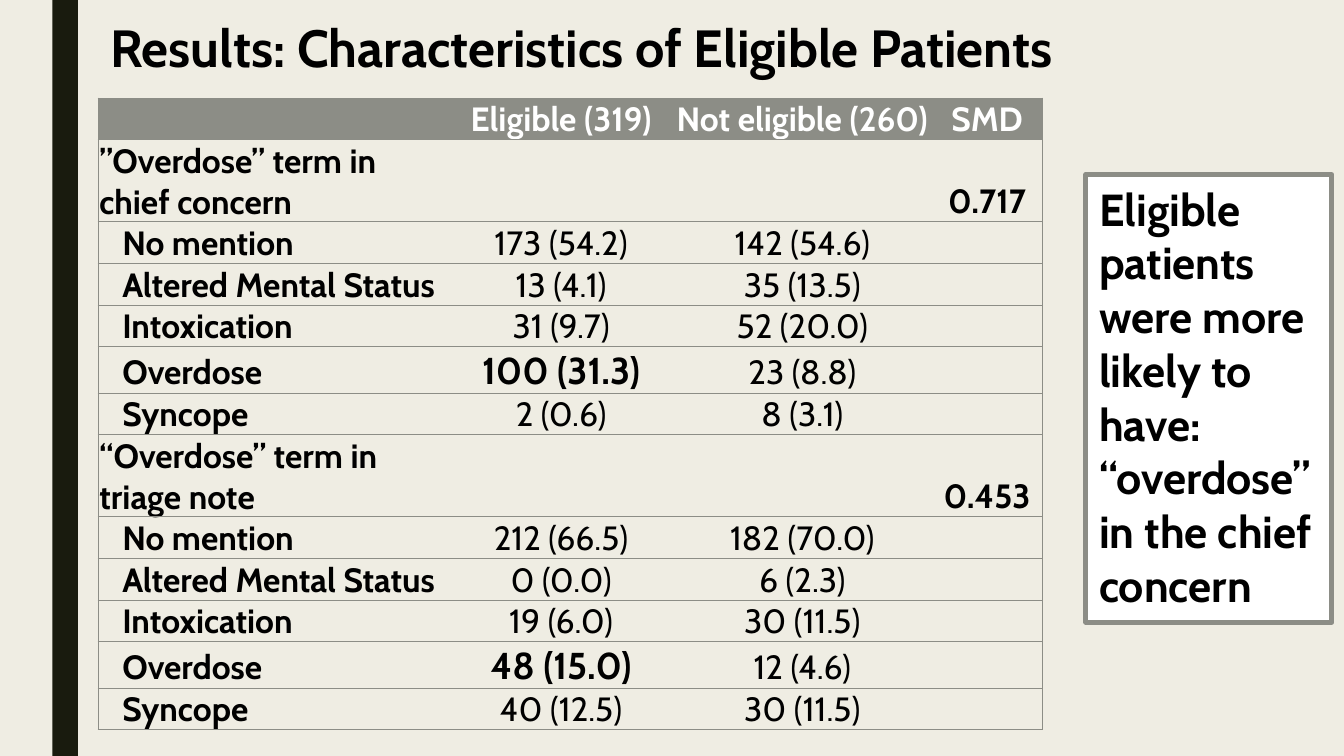
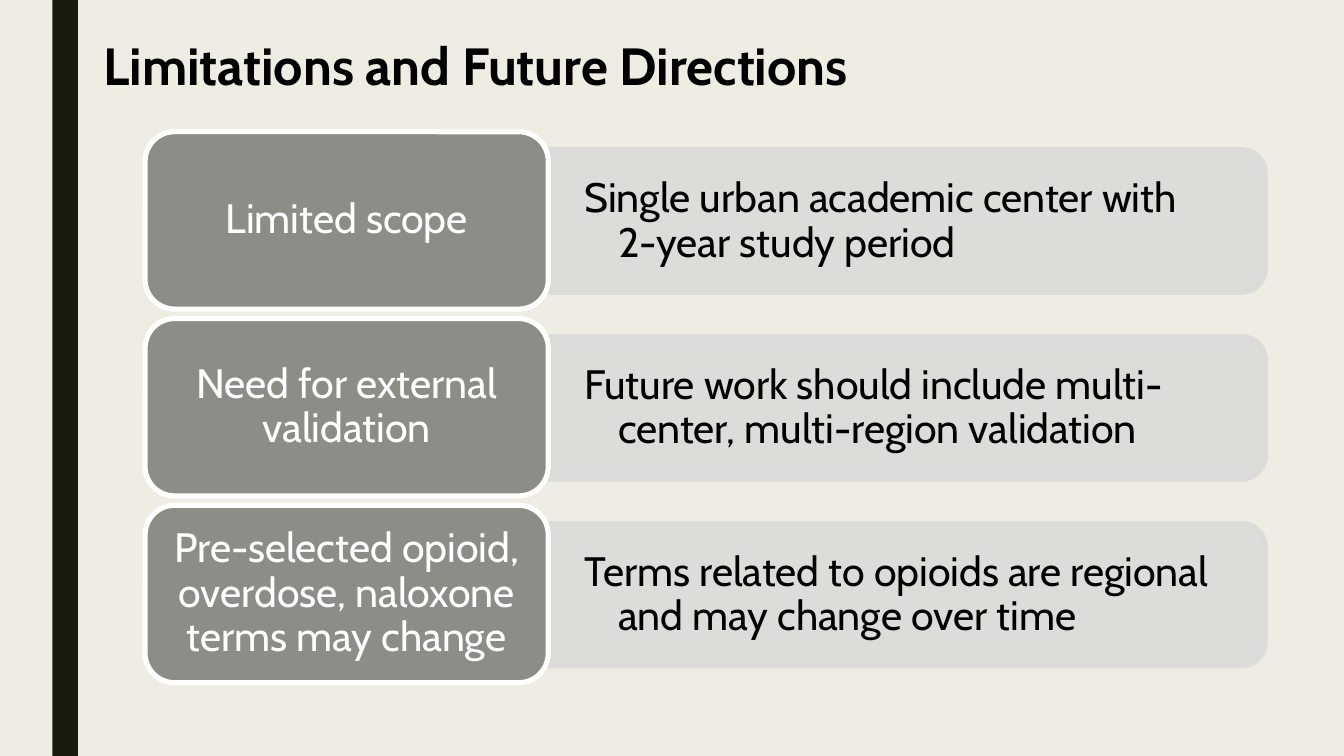
from lxml import etree
from pptx import Presentation
from pptx import util as u
from pptx.dml.color import RGBColor
from pptx.enum import shapes, text
from pptx.oxml import ns

# Shared look
FONT = "Cabin"
CREAM = RGBColor(0xEF, 0xED, 0xE3)
DARK = RGBColor(0x19, 0x1B, 0x0E)
GREY = RGBColor(0x8C, 0x8D, 0x86)
PALE = RGBColor(0xDA, 0xDB, 0xD9)
WHITE = RGBColor(0xFF, 0xFF, 0xFF)
BLACK = RGBColor(0x00, 0x00, 0x00)
OUTLINE = u.Pt(2.75)
PAGE_WIDTH = u.Inches(10)
PAGE_HEIGHT = PAGE_WIDTH * 9 // 16
TITLE_ONLY = 5
NO_TABLE_STYLE = "{2D5ABB26-0587-4C30-8999-92F81FD0307C}"

# Patient table: section heading, SMD, then term, eligible, not eligible
HEADINGS = ["", "Eligible (319)", "Not eligible (260)", "SMD"]
SECTIONS = [
    ("”Overdose” term in chief concern", "0.717", [
        ("No mention", "173 (54.2)", "142 (54.6)"),
        ("Altered Mental Status", "13 (4.1)", "35 (13.5)"),
        ("Intoxication", "31 (9.7)", "52 (20.0)"),
        ("Overdose", "100 (31.3)", "23 (8.8)"),
        ("Syncope", "2 (0.6)", "8 (3.1)"),
    ]),
    ("“Overdose” term in triage note", "0.453", [
        ("No mention", "212 (66.5)", "182 (70.0)"),
        ("Altered Mental Status", "0 (0.0)", "6 (2.3)"),
        ("Intoxication", "19 (6.0)", "30 (11.5)"),
        ("Overdose", "48 (15.0)", "12 (4.6)"),
        ("Syncope", "40 (12.5)", "30 (11.5)"),
    ]),
]
COLUMN_WIDTHS = [2.61, 1.67, 1.92, 0.83]
ROW_HEIGHT = 0.22  # the least height; rows grow with their text
TABLE_PLACE = (0.73, 0.73, 7.02, 4.65)

LIMITATIONS = [
    ("Limited scope", "Single urban academic center with 2-year study period"),
    ("Need for external validation",
     "Future work should include multi-center, multi-region validation"),
    ("Pre-selected opioid, overdose, naloxone terms may change",
     "Terms related to opioids are regional and may change over time"),
]


def set_values(target, values):
    for name, value in values.items():
        setattr(target, name, value)


def inset(target, left, top, right, bottom):
    set_values(target, {
        "margin_left": u.Inches(left), "margin_top": u.Inches(top),
        "margin_right": u.Inches(right), "margin_bottom": u.Inches(bottom)})


def write(para, words, size, color, bold=False, align=text.PP_ALIGN.LEFT):
    para.alignment = align
    span = para.add_run()
    span.text = words
    set_values(span.font, {"name": FONT, "size": u.Pt(size), "bold": bold})
    span.font.color.rgb = color


def add_box(page, kind, place, fill, line=None):
    box = page.shapes.add_shape(kind, *map(u.Inches, place))
    box.shadow.inherit = False
    box.fill.solid()
    box.fill.fore_color.rgb = fill
    if line is None:
        box.line.fill.background()
    else:
        box.line.color.rgb = line
        box.line.width = OUTLINE
    return box


def set_opacity(box, percent):
    for color in box.element.spPr.iter(ns.qn("a:srgbClr")):
        alpha = etree.SubElement(color, ns.qn("a:alpha"))
        alpha.set("val", str(percent * 1000))


def dress_master(deck, page):
    """Give the master its background and the dark band at the left."""
    master = deck.slide_master
    master.background.fill.solid()
    master.background.fill.fore_color.rgb = CREAM
    band = add_box(page, shapes.MSO_SHAPE.RECTANGLE, (0.39, 0, 0.19, 1), DARK)
    band.height = PAGE_HEIGHT
    master.shapes.element.insert(2, band.element)


def add_page(deck, title, place):
    page = deck.slides.add_slide(deck.slide_layouts[TITLE_ONLY])
    box = page.shapes.title
    set_values(box, dict(zip(("left", "top", "width", "height"),
                             map(u.Inches, place))))
    set_values(box.text_frame, {
        "word_wrap": True, "vertical_anchor": text.MSO_ANCHOR.TOP,
        "auto_size": text.MSO_AUTO_SIZE.SHAPE_TO_FIT_TEXT})
    write(box.text_frame.paragraphs[0], title, 28, BLACK, bold=True)
    return page


def set_borders(cell, sides):
    """Add thin grey borders; they stand before the fill in the cell."""
    properties = cell._tc.get_or_add_tcPr()
    for place, side in enumerate(sides):
        line = etree.Element(ns.qn(f"a:ln{side}"), w=str(u.Pt(0.5)))
        fill = etree.SubElement(line, ns.qn("a:solidFill"))
        etree.SubElement(fill, ns.qn("a:srgbClr"), val=str(GREY))
        properties.insert(place, line)


def table_rows():
    """Return (kind, four texts) for every row."""
    rows = [("head", HEADINGS)]
    for heading, smd, terms in SECTIONS:
        rows.append(("section", [heading, "", "", smd]))
        for term in terms:
            kind = "key" if term[0] == "Overdose" else "term"
            rows.append((kind, [*term, ""]))
    return rows


def fill_cell(cell, words, kind, column):
    indented = column == 0 and kind in ("term", "key")
    inset(cell, 0.18 if indented else 0.01, 0.01 if words else 0, 0.01, 0)
    cell.vertical_anchor = text.MSO_ANCHOR.BOTTOM
    if kind == "head":
        cell.fill.solid()
        cell.fill.fore_color.rgb = GREY
    else:
        cell.fill.background()
    last = len(COLUMN_WIDTHS) - 1
    set_borders(cell, {0: "L", last: "R"}.get(column, "") + "TB")
    if words:
        key = kind == "key" and column == 1
        write(cell.text_frame.paragraphs[0], words, 20 if key else 18,
              WHITE if kind == "head" else BLACK,
              bold=key or kind in ("head", "section") or column == 0,
              align=text.PP_ALIGN.CENTER if column else text.PP_ALIGN.LEFT)


def add_patient_table(page):
    rows = table_rows()
    frame = page.shapes.add_table(len(rows), len(COLUMN_WIDTHS),
                                  *map(u.Inches, TABLE_PLACE))
    table = frame.table
    table.horz_banding = False
    next(frame.element.iter(ns.qn("a:tableStyleId"))).text = NO_TABLE_STYLE
    for column, width in zip(table.columns, COLUMN_WIDTHS):
        column.width = u.Inches(width)
    for r, (kind, texts) in enumerate(rows):
        table.rows[r].height = u.Inches(ROW_HEIGHT)
        for c, words in enumerate(texts):
            fill_cell(table.cell(r, c), words, kind, c)
    frame.width, frame.height = map(u.Inches, TABLE_PLACE[2:])


def add_callout(page, place, lines):
    box = add_box(page, shapes.MSO_SHAPE.RECTANGLE, place, WHITE, GREY)
    frame = box.text_frame
    set_values(frame, {"word_wrap": True,
                       "vertical_anchor": text.MSO_ANCHOR.TOP,
                       "auto_size": text.MSO_AUTO_SIZE.SHAPE_TO_FIT_TEXT})
    for i, words in enumerate(lines):
        para = frame.add_paragraph() if i else frame.paragraphs[0]
        write(para, words, 24, BLACK, bold=True)


def add_limitation(page, top, label, detail):
    # Pale bar, a shape with two round corners turned to the right
    bar = add_box(page, shapes.MSO_SHAPE.ROUND_2_SAME_RECTANGLE,
                  (6.22, top - 2, 1.06, 5.33), PALE, PALE)
    bar.rotation = 90
    set_opacity(bar, 90)

    # Detail text with a hanging indent
    note = page.shapes.add_textbox(
        *map(u.Inches, (4.08, top + 0.19, 5.28, 0.96)))
    inset(note.text_frame, 0.27, 0.14, 0.27, 0.14)
    para = note.text_frame.paragraphs[0]
    write(para, detail, 22, BLACK)
    para.level = 1
    para._p.get_or_add_pPr().set("marL", str(u.Inches(0.25)))
    para._p.get_or_add_pPr().set("indent", str(u.Inches(-0.25)))

    # Grey label
    box = add_box(page, shapes.MSO_SHAPE.ROUNDED_RECTANGLE,
                  (1.08, top, 3, 1.32), GREY, WHITE)
    inset(box.text_frame, 0.09, 0.05, 0.09, 0.05)
    write(box.text_frame.paragraphs[0], label, 22, WHITE,
          align=text.PP_ALIGN.CENTER)

    for frame in (note.text_frame, box.text_frame):
        set_values(frame, {"word_wrap": True,
                           "vertical_anchor": text.MSO_ANCHOR.MIDDLE})
        frame.paragraphs[0].line_spacing = 0.9


def main():
    deck = Presentation()
    deck.slide_width, deck.slide_height = PAGE_WIDTH, PAGE_HEIGHT

    # Results
    page = add_page(deck, "Results: Characteristics of Eligible Patients",
                    (0.72, 0.06, 8.45, 0.57))
    dress_master(deck, page)
    add_patient_table(page)
    add_callout(page, (8.08, 1.3, 1.83, 3.33),
                ["Eligible patients were more likely to have:",
                 "“overdose” in the chief concern"])

    # Limitations
    page = add_page(deck, "Limitations and Future Directions",
                    (0.67, 0.2, 7.17, 0.57))
    for i, (label, detail) in enumerate(LIMITATIONS):
        add_limitation(page, 0.98 + 1.39 * i, label, detail)

    deck.save("out.pptx")


if __name__ == "__main__":
    main()
